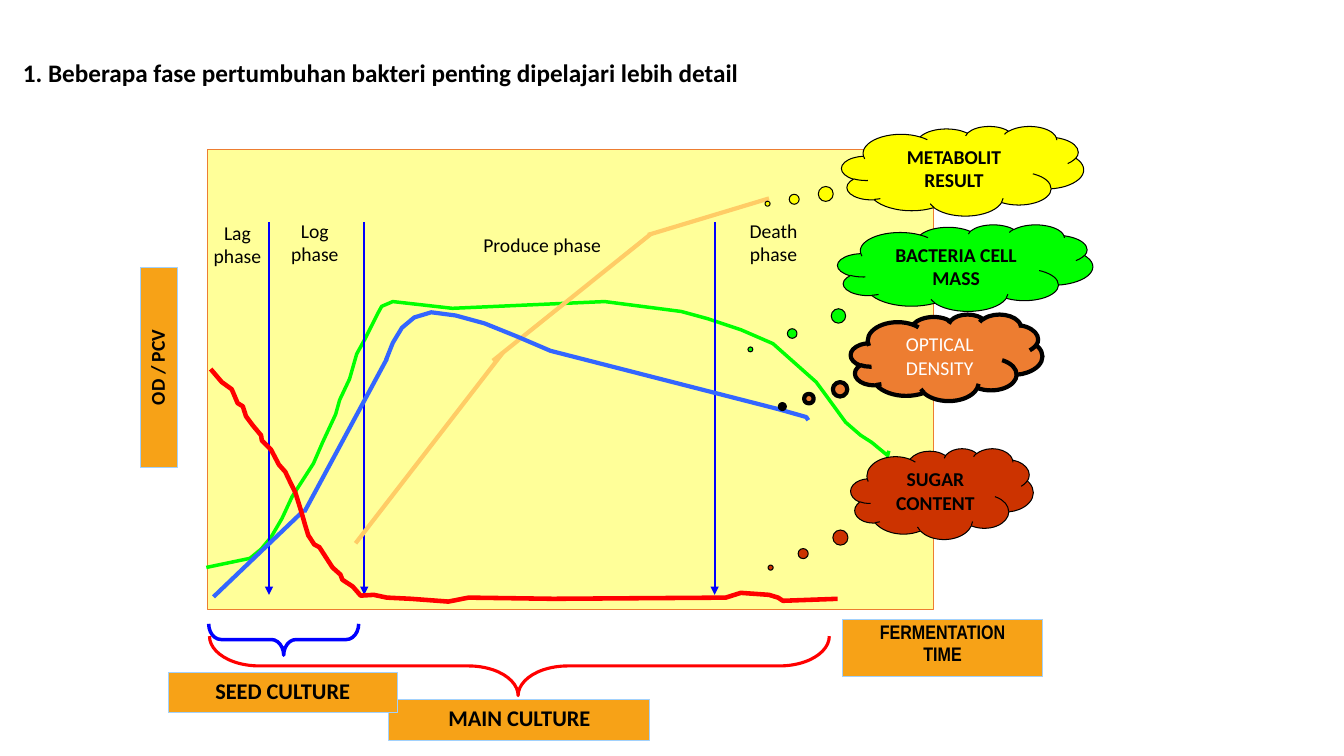
from pptx import Presentation
from pptx.dml.color import RGBColor
from pptx.enum.shapes import MSO_CONNECTOR, MSO_SHAPE
from pptx.enum.text import MSO_ANCHOR, PP_ALIGN
from pptx.oxml.ns import qn
from pptx.util import Cm, Pt
from lxml import etree

RECTANGLE, BRACE, CLOUD = MSO_SHAPE.RECTANGLE, MSO_SHAPE.LEFT_BRACE, MSO_SHAPE.CLOUD_CALLOUT
STRAIGHT = MSO_CONNECTOR.STRAIGHT
TOP, MIDDLE = MSO_ANCHOR.TOP, MSO_ANCHOR.MIDDLE
LEFT, CENTER = PP_ALIGN.LEFT, PP_ALIGN.CENTER

COLORS = {
    "black": "000000", "white": "FFFFFF", "plot": "FFFF99", "orange": "ED7D31",
    "label": "F7A217", "label edge": "A1D1FD", "phase": "0000FF", "cells": "00FF00",
    "density": "3366FF", "metabolite": "FFCC66", "sugar": "FF0000",
    "yellow": "FFFF00", "brick": "CC3300",
}

# Curve points in cm from the top left corner of the plot
CELL_CURVE = [
    (-0.03, 10.54), (1.07, 10.31), (1.35, 10.08), (1.6, 9.78), (1.88, 9.3), (2.13, 8.76),
    (2.67, 7.92), (2.9, 7.39), (3.23, 6.68), (3.33, 6.32), (3.58, 5.79), (3.76, 5.16),
    (3.96, 4.8), (4.29, 4.14), (4.39, 3.96), (4.67, 3.84), (6.17, 4.01), (10.01, 3.84),
    (11.94, 4.09), (12.6, 4.27), (13.44, 4.55), (14.25, 4.9), (15.34, 5.87), (15.6, 6.22),
    (16.08, 6.88), (16.46, 7.21), (16.74, 7.39), (17.14, 7.72), (17.17, 7.6),
]
DENSITY_CURVE = [
    (4.5, 5.31), (4.67, 4.88), (4.9, 4.5), (5.21, 4.24), (5.64, 4.11), (6.25, 4.19),
    (6.98, 4.39), (7.8, 4.72), (8.64, 5.08), (14.38, 6.55), (15.09, 6.75), (15.14, 6.83),
]
SUGAR_CURVE = [
    (0.08, 5.54), (0.36, 5.87), (0.61, 6.05), (0.76, 6.4), (0.89, 6.48), (0.97, 6.73),
    (1.14, 6.96), (1.35, 7.21), (1.37, 7.34), (1.6, 7.57), (1.8, 7.95), (1.96, 8.13),
    (2.08, 8.38), (2.21, 8.64), (2.36, 9.12), (2.46, 9.47), (2.54, 9.73), (2.69, 9.96),
    (2.82, 10.03), (3.15, 10.54), (3.35, 10.72), (3.4, 10.85), (3.66, 11.02), (3.86, 11.25),
    (4.19, 11.23), (4.52, 11.3), (5.13, 11.33), (6.07, 11.4), (6.58, 11.3), (8.71, 11.33),
    (13.06, 11.3), (13.44, 11.18), (14.15, 11.23), (14.38, 11.3), (14.5, 11.38), (15.88, 11.33),
]
DENSITY_LINES = [((0.15, 11.28), (2.44, 9.09)), ((2.44, 9.14), (4.52, 5.28))]
METABOLITE_LINES = [((3.73, 9.93), (7.44, 5.13)), ((7.19, 5.33), (11.18, 2.13)),
                    ((11.1, 2.16), (14.15, 1.24))]
PHASE_ENDS = [1.55, 3.95, 12.78]
PHASES = [
    ((-0.25, 1.68, 2.01, 1.52), ["Lag", "phase"]),
    ((1.7, 1.62, 2.01, 1.52), ["Log", "phase"]),
    ((4.09, 1.98, 8.69, 0.91), ["Produce phase"]),
    ((12.98, 1.62, 2.57, 1.52), ["Death", "phase"]),
]


def rgb(name):
    return RGBColor.from_string(COLORS[name])


def style(shape, fill, line, width):
    shape.shadow.inherit = False
    if fill:
        shape.fill.solid()
        shape.fill.fore_color.rgb = rgb(fill)
    else:
        shape.fill.background()
    shape.line.color.rgb = rgb(line)
    shape.line.width = Pt(width)


def write(shape, lines, size=14, bold=True, color="black", font="Calibri",
          align=CENTER, anchor=TOP, spacing=None, gap=0):
    frame = shape.text_frame
    frame.word_wrap = True
    frame.vertical_anchor = anchor
    frame.text = "\n".join(lines)
    for index, para in enumerate(frame.paragraphs):
        para.alignment = align
        para.line_spacing = spacing
        para.space_before = Pt(gap if index else 0)
        for span in para.runs:
            span.font.name, span.font.size, span.font.bold = font, Pt(size), bold
            span.font.color.rgb = rgb(color)


def add_preset(page, kind, box, fill, line, width, turned=False):
    left, top, wide, high = box
    if turned:  # the box is the area covered after a quarter turn
        left, top = left + (wide - high) / 2, top + (high - wide) / 2
        wide, high = high, wide
    shape = page.shapes.add_shape(kind, Cm(left), Cm(top), Cm(wide), Cm(high))
    shape.rotation = 270 if turned else 0
    style(shape, fill, line, width)
    return shape


def add_text(page, box, lines, **looks):
    write(page.shapes.add_textbox(*map(Cm, box)), lines, **looks)


def add_line(page, box, start, end, color, width, arrow=False):
    left, top = box[:2]
    line = page.shapes.add_connector(STRAIGHT, Cm(left + start[0]), Cm(top + start[1]),
                                     Cm(left + end[0]), Cm(top + end[1]))
    line.line.color.rgb = rgb(color)
    line.line.width = Pt(width)
    if arrow:
        etree.SubElement(line.line._get_or_add_ln(), qn("a:tailEnd"), type="triangle")
    etree.SubElement(line._element.spPr, qn("a:effectLst"))


def add_curve(page, box, points, color, width):
    spots = [(Cm(box[0] + x), Cm(box[1] + y)) for x, y in points]
    builder = page.shapes.build_freeform(*spots[0])
    builder.add_line_segments(spots[1:], close=False)
    style(builder.convert_to_shape(), None, color, width)


def draw_plot(page, box):
    add_preset(page, RECTANGLE, box, "plot", "orange", 0.75)
    add_curve(page, box, CELL_CURVE, "cells", 2.5)
    for x in PHASE_ENDS:
        add_line(page, box, (x, 1.83), (x, 11.23), "phase", 1.5, arrow=True)
    for start, end in METABOLITE_LINES:
        add_line(page, box, start, end, "metabolite", 3)
    for start, end in DENSITY_LINES:
        add_line(page, box, start, end, "density", 3)
    add_curve(page, box, DENSITY_CURVE, "density", 3)
    for (x, y, wide, high), lines in PHASES:
        add_text(page, (box[0] + x, box[1] + y, wide, high), lines, bold=False)
    add_curve(page, box, SUGAR_CURVE, "sugar", 3.25)


def draw_cloud(page, box, pointer, lines, fill, width=0.75, **looks):
    cloud = add_preset(page, CLOUD, box, fill, "black", width)
    cloud.adjustments[0], cloud.adjustments[1] = pointer
    write(cloud, lines, **looks)


def draw_label(page, box, lines, turned=False, **looks):
    label = add_preset(page, RECTANGLE, box, "label", "label edge", 0.75, turned)
    write(label, lines, **looks)


def draw_brace(page, box, color, width, bends):
    brace = add_preset(page, BRACE, box, None, color, width, turned=True)
    brace.adjustments[0], brace.adjustments[1] = bends


def main():
    deck = Presentation()
    deck.slide_width, deck.slide_height = Cm(33.87), Cm(19.05)
    page = deck.slides.add_slide(deck.slide_layouts[6])

    # Title and growth curves
    add_text(page, (0.33, 1.32, 22.94, 1.02),
             ["1. Beberapa fase pertumbuhan bakteri penting dipelajari lebih detail"],
             size=18, align=LEFT)
    draw_plot(page, (5.23, 3.76, 18.29, 11.61))

    # Axis names
    draw_label(page, (3.54, 6.74, 0.94, 5.03), ["OD / PCV"], turned=True)
    draw_label(page, (21.23, 15.6, 5.05, 1.45), ["FERMENTATION", "TIME"],
               font="Arial Narrow", spacing=0.8, gap=2.8)

    # Clouds naming the curves
    draw_cloud(page, (21.44, 11.3, 4.6, 2.29), (-0.939, 0.812), ["SUGAR CONTENT"], "brick")
    draw_cloud(page, (21.11, 5.66, 6.43, 2.18), (-0.842, 0.943), ["BACTERIA CELL MASS"], "cells")
    draw_cloud(page, (21.21, 3.18, 6.1, 2.26), (-0.806, 0.365), ["METABOLIT", "RESULT"], "yellow")
    draw_cloud(page, (21.44, 7.92, 4.83, 2.18), (-0.857, 0.567), ["OPTICAL DENSITY"], "orange",
               width=3, bold=False, color="white", anchor=MIDDLE)

    # Culture stages
    draw_label(page, (9.8, 17.63, 6.58, 1.02), ["MAIN CULTURE"], size=16)
    draw_label(page, (4.24, 16.94, 5.77, 1.02), ["SEED CULTURE"], size=16)
    draw_brace(page, (5.26, 15.72, 3.78, 0.79), "phase", 2.5, (0.395, 0.5))
    draw_brace(page, (5.28, 16.03, 15.62, 1.5), "sugar", 2.25, (0.836, 0.498))

    deck.save("out.pptx")


if __name__ == "__main__":
    main()
